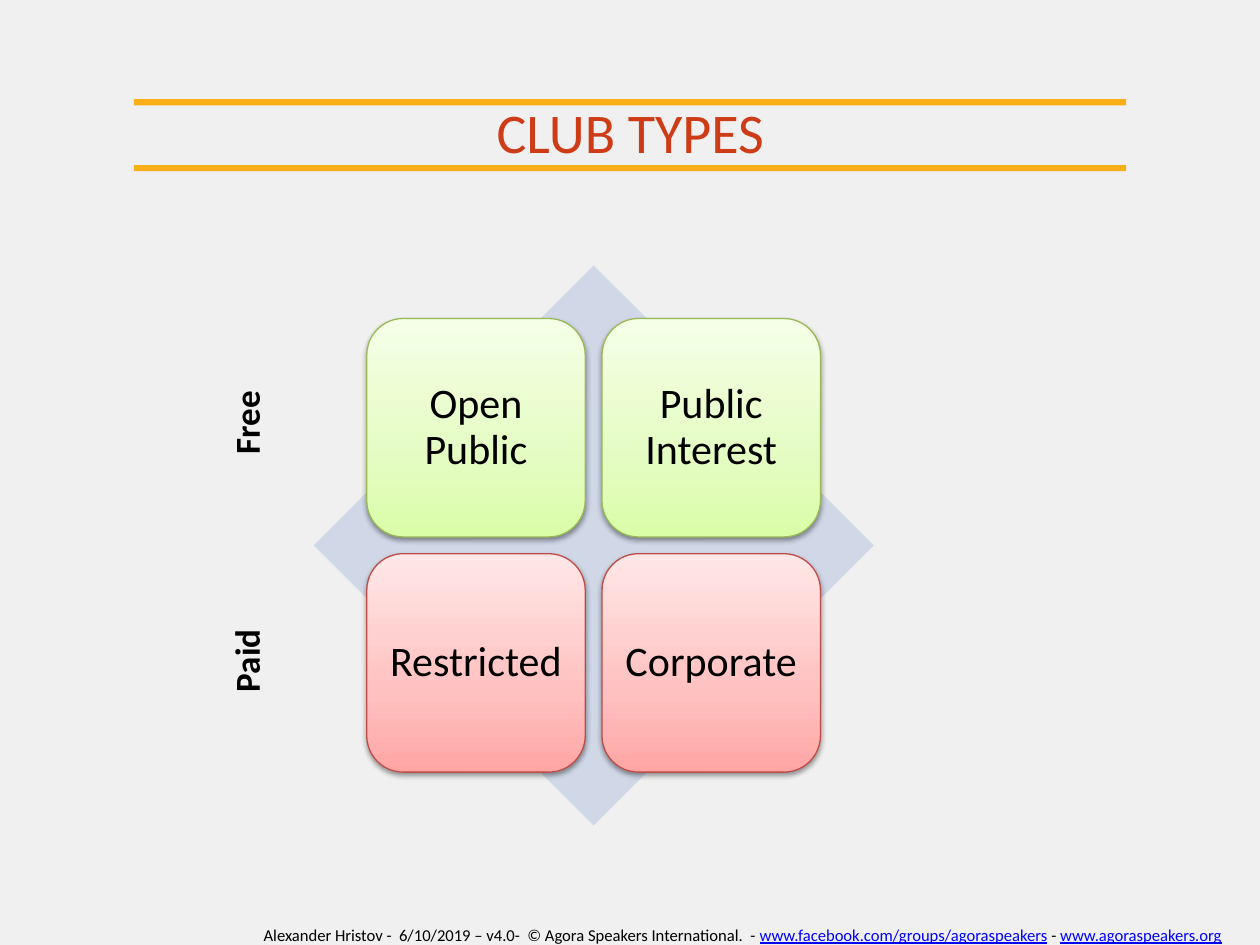
"""Build the club types slide: a diamond with free and paid clubs."""
from lxml.etree import SubElement
from pptx import Presentation
from pptx.dml.color import RGBColor
from pptx.enum.shapes import MSO_SHAPE
from pptx.enum.text import MSO_ANCHOR, PP_ALIGN
from pptx.oxml import parse_xml
from pptx.oxml.ns import nsdecls, qn
from pptx.util import Pt

PAPER = RGBColor(0xF0, 0xF0, 0xF0)
GOLD = RGBColor(0xF8, 0xAF, 0x18)
RUST = RGBColor(0xCE, 0x3C, 0x17)
BLACK = RGBColor(0, 0, 0)
BLUE = RGBColor(0, 0, 0xFF)
HAZE = RGBColor(0xD0, 0xD8, 0xE8)
LIME = [RGBColor(0xDA, 0xFD, 0xA7), RGBColor(0xE4, 0xFC, 0xC2), RGBColor(0xF5, 0xFF, 0xE7)]
ROSE = [RGBColor(0xFF, 0xA6, 0xA5), RGBColor(0xFF, 0xC0, 0xBF), RGBColor(0xFF, 0xE7, 0xE7)]
LEAF = RGBColor(0x98, 0xB9, 0x55)
BRICK = RGBColor(0xBF, 0x4C, 0x48)


def add_form(kind, left, top, width, height, color):
    form = slide.shapes.add_shape(kind, Pt(left), Pt(top), Pt(width), Pt(height))
    form.shadow.inherit = False
    form.fill.solid()
    form.fill.fore_color.rgb = color
    form.line.fill.background()
    return form


def style(font, size, color, bold=False):
    font.name = "Calibri"
    font.size = Pt(size)
    font.bold = bold
    font.color.rgb = color


deck = Presentation()
deck.slide_width, deck.slide_height = Pt(720), Pt(540)
slide = deck.slides.add_slide(deck.slide_layouts[5])
slide.background.fill.solid()
slide.background.fill.fore_color.rgb = PAPER

for top in (56.7, 94.3):
    add_form(MSO_SHAPE.RECTANGLE, 76.5, top, 567, 3.5, GOLD)

foot = slide.shapes.add_textbox(Pt(121.7), Pt(525), Pt(598.3), Pt(15))
frame = foot.text_frame
frame.word_wrap = True
frame.margin_right = Pt(0)
line = frame.paragraphs[0]
line.alignment = PP_ALIGN.CENTER
for text, link in (
    ("Alexander Hristov -  6/10/2019 – v4.0-  © Agora Speakers International.  - ", False),
    ("www.facebook.com/groups/agoraspeakers", True),
    (" - ", False),
    ("www.agoraspeakers.org", True),
):
    run = line.add_run()
    run.text = text
    style(run.font, 9.5, BLUE if link else BLACK)
    run.font.underline = link

title = slide.shapes.title
title.left, title.top, title.width, title.height = Pt(0.5), Pt(51), Pt(719.5), Pt(43.5)
frame = title.text_frame
frame.text = "CLUB TYPES"
frame.vertical_anchor = MSO_ANCHOR.TOP
frame.margin_top = Pt(5)
frame.paragraphs[0].alignment = PP_ALIGN.CENTER
style(frame.paragraphs[0].runs[0].font, 32, RUST)

add_form(MSO_SHAPE.DIAMOND, 179.3, 151.7, 320, 320, HAZE)

SIDE, PITCH = 124.8, 134.4
rows = (
    (("Open Public", "Public Interest"), LIME, LEAF),
    (("Restricted", "Corporate"), ROSE, BRICK),
)
for row, (names, shades, edge) in enumerate(rows):
    for col, name in enumerate(names):
        tile = add_form(MSO_SHAPE.ROUNDED_RECTANGLE, 209.6 + col * PITCH,
                        182 + row * PITCH, SIDE, SIDE, shades[0])
        tile.line.color.rgb = edge
        tile.line.width = Pt(0.75)
        props = tile.element.spPr
        stops = "".join(
            f'<a:gs pos="{pos}"><a:srgbClr val="{shade}"/></a:gs>'
            for pos, shade in zip((0, 35000, 100000), shades)
        )
        blend = parse_xml(
            f'<a:gradFill {nsdecls("a")} rotWithShape="1"><a:gsLst>{stops}</a:gsLst>'
            '<a:lin ang="16200000" scaled="0"/></a:gradFill>'
        )
        props.replace(props.find(qn("a:solidFill")), blend)
        glow = SubElement(props.find(qn("a:effectLst")), qn("a:outerShdw"),
                          blurRad=str(Pt(3.1)), dist=str(Pt(1.6)),
                          dir="5400000", rotWithShape="0")
        tint = SubElement(glow, qn("a:srgbClr"), val="000000")
        SubElement(tint, qn("a:alpha"), val="38000")

        frame = tile.text_frame
        frame.text = name
        frame.word_wrap = True
        frame.vertical_anchor = MSO_ANCHOR.MIDDLE
        frame.margin_left = frame.margin_right = Pt(7.2)
        frame.margin_top = frame.margin_bottom = Pt(7.2)
        line = frame.paragraphs[0]
        line.alignment = PP_ALIGN.CENTER
        line.line_spacing = 0.9
        style(line.runs[0].font, 24, BLACK)

for name, top in (("Free", 226), ("Paid", 362)):
    label = slide.shapes.add_textbox(Pt(84), Pt(top), Pt(113), Pt(31))
    label.rotation = 270
    frame = label.text_frame
    frame.text = name
    frame.word_wrap = True
    frame.paragraphs[0].alignment = PP_ALIGN.CENTER
    style(frame.paragraphs[0].runs[0].font, 20, BLACK, True)

deck.save("out.pptx")
